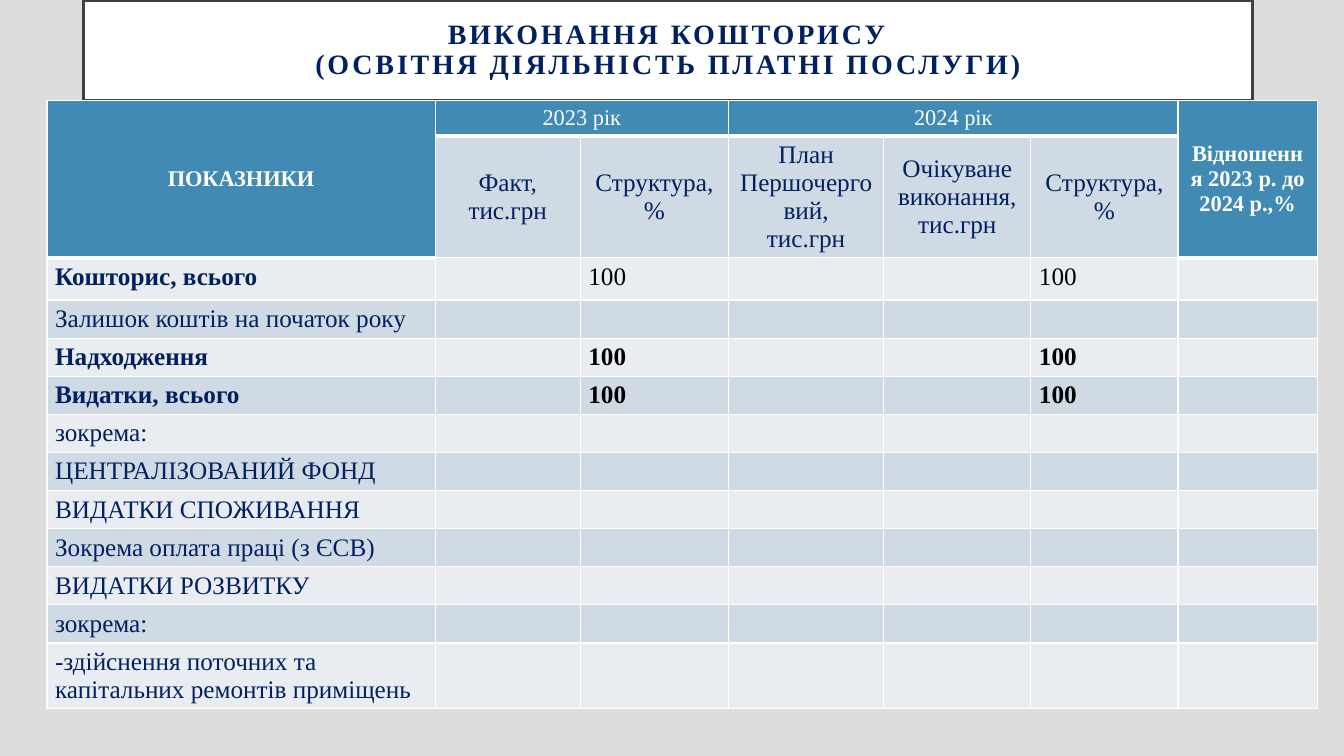
"""Build the slide with the budget execution table for paid educational services."""
import dataclasses

import lxml.etree
import pptx
import pptx.dml.color
import pptx.enum.text
import pptx.oxml.ns
import pptx.util

COLORS = {
    "backdrop": "DDDDDD",
    "white": "FFFFFF",
    "frame": "404040",
    "navy": "002060",
    "black": "000000",
    "header": "418AB3",
    "dark_band": "CFDAE5",
    "light_band": "E9EDF2",
}
FONT = "Times New Roman"
SLIDE_WIDTH = pptx.util.Inches(13.33)
SLIDE_HEIGHT = pptx.util.Inches(7.5)
COLUMN_SHARES = [28.88, 10.8, 11.03, 11.55, 10.95, 10.95, 10.35]
ROW_SHARES = [4.67, 16, 5.6] + [5.04] * 9 + [8.67]
STRUCTURE_COLUMNS = (2, 5)
TALL_COLUMNS = (0, 6)


@dataclasses.dataclass(frozen=True)
class Heading:
    row: int
    column: int
    text: str
    rows: int = 1
    columns: int = 1
    bold: bool = False
    middle: bool = True


@dataclasses.dataclass(frozen=True)
class Indicator:
    name: str
    share: str = ""
    bold: bool = False
    share_bold: bool = False


HEADINGS = [
    Heading(0, 0, "ПОКАЗНИКИ", rows=2, bold=True),
    Heading(0, 1, "2023 рік", columns=2, middle=False),
    Heading(0, 3, "2024 рік", columns=3, middle=False),
    Heading(0, 6, "Відношення 2023 р. до 2024 р.,%", rows=2, bold=True),
    Heading(1, 1, "Факт,\nтис.грн"),
    Heading(1, 2, "Структура,\n%"),
    Heading(1, 3, "План Першочерговий,\nтис.грн"),
    Heading(1, 4, "Очікуване\nвиконання, тис.грн"),
    Heading(1, 5, "Структура,\n%"),
]
INDICATORS = [
    Indicator("Кошторис, всього", "100", bold=True),
    Indicator("Залишок коштів на початок року"),
    Indicator("Надходження", "100", bold=True, share_bold=True),
    Indicator("Видатки, всього", "100", bold=True, share_bold=True),
    Indicator("зокрема:"),
    Indicator("ЦЕНТРАЛІЗОВАНИЙ ФОНД"),
    Indicator("ВИДАТКИ СПОЖИВАННЯ"),
    Indicator("Зокрема оплата праці (з ЄСВ)"),
    Indicator("ВИДАТКИ РОЗВИТКУ"),
    Indicator("зокрема:"),
    Indicator("-здійснення поточних та капітальних ремонтів приміщень"),
]


def color(name: str) -> pptx.dml.color.RGBColor:
    return pptx.dml.color.RGBColor.from_string(COLORS[name])


def across(percent: float) -> int:
    return round(SLIDE_WIDTH * percent / 100)


def down(percent: float) -> int:
    return round(SLIDE_HEIGHT * percent / 100)


def paint(fill, name: str) -> None:
    fill.solid()
    fill.fore_color.rgb = color(name)


def write(frame, text: str, size: float, ink: str, bold: bool, centered: bool) -> None:
    frame.text = text
    for paragraph in frame.paragraphs:
        paragraph.font.name = FONT
        paragraph.font.size = pptx.util.Pt(size)
        paragraph.font.bold = bold
        paragraph.font.color.rgb = color(ink)
        if centered:
            paragraph.alignment = pptx.enum.text.PP_ALIGN.CENTER


def add_borders(cell, bottom_width: float) -> None:
    properties = cell._tc.get_or_add_tcPr()
    for side, width in (("lnL", 1), ("lnR", 1), ("lnT", 1), ("lnB", bottom_width)):
        line = lxml.etree.SubElement(
            properties, pptx.oxml.ns.qn(f"a:{side}"), w=str(pptx.util.Pt(width)))
        solid = lxml.etree.SubElement(line, pptx.oxml.ns.qn("a:solidFill"))
        lxml.etree.SubElement(solid, pptx.oxml.ns.qn("a:srgbClr"), val=COLORS["white"])


def add_title(slide) -> None:
    title = slide.shapes.title
    title.left, title.top = across(6.23), 0
    title.width, title.height = across(86.95), down(13.33)
    paint(title.fill, "white")
    title.line.color.rgb = color("frame")
    title.line.width = pptx.util.Pt(2.5)
    frame = title.text_frame
    frame.auto_size = pptx.enum.text.MSO_AUTO_SIZE.NONE
    frame.word_wrap = True
    frame.vertical_anchor = pptx.enum.text.MSO_ANCHOR.MIDDLE
    frame.margin_left = frame.margin_right = across(1.5)
    frame.margin_top = frame.margin_bottom = down(2.67)
    write(frame, "ВИКОНАННЯ КОШТОРИСУ\v(ОСВІТНЯ ДІЯЛЬНІСТЬ ПЛАТНІ ПОСЛУГИ)",
          20, "navy", True, True)
    paragraph = frame.paragraphs[0]
    paragraph.line_spacing = 0.9
    for run in paragraph.runs:
        run._r.get_or_add_rPr().set("spc", "200")


def style_grid(table) -> None:
    for row in range(len(ROW_SHARES)):
        for column in range(len(COLUMN_SHARES)):
            cell = table.cell(row, column)
            is_header = row == 0 or (row == 1 and column in TALL_COLUMNS)
            add_borders(cell, 3 if is_header else 1)
            band = "dark_band" if row % 2 else "light_band"
            paint(cell.fill, "header" if is_header else band)
            cell.margin_left = cell.margin_right = across(0.6)
            cell.margin_top = cell.margin_bottom = down(0.67)
            write(cell.text_frame, "", 16 if is_header else 18, "navy", False, False)


def fill_headings(table) -> None:
    for heading in HEADINGS:
        cell = table.cell(heading.row, heading.column)
        if heading.rows * heading.columns > 1:
            cell.merge(table.cell(heading.row + heading.rows - 1,
                                  heading.column + heading.columns - 1))
        if heading.middle:
            cell.vertical_anchor = pptx.enum.text.MSO_ANCHOR.MIDDLE
        size, ink = (18, "navy") if heading.row else (16, "white")
        write(cell.text_frame, heading.text, size, ink, heading.bold, True)


def fill_indicators(table) -> None:
    for row, indicator in enumerate(INDICATORS, start=2):
        write(table.cell(row, 0).text_frame, indicator.name,
              18, "navy", indicator.bold, False)
        if indicator.share:
            for column in STRUCTURE_COLUMNS:
                write(table.cell(row, column).text_frame, indicator.share,
                      18, "black", indicator.share_bold, False)


def add_budget_table(slide) -> None:
    table = slide.shapes.add_table(
        len(ROW_SHARES), len(COLUMN_SHARES), across(3.5), down(13.33),
        across(sum(COLUMN_SHARES)), down(sum(ROW_SHARES))).table
    table.first_row = table.horz_banding = False
    for column, share in zip(table.columns, COLUMN_SHARES):
        column.width = across(share)
    for row, share in zip(table.rows, ROW_SHARES):
        row.height = down(share)
    style_grid(table)
    fill_headings(table)
    fill_indicators(table)


def main() -> None:
    deck = pptx.Presentation()
    deck.slide_width, deck.slide_height = SLIDE_WIDTH, SLIDE_HEIGHT
    slide = deck.slides.add_slide(deck.slide_layouts.get_by_name("Title Only"))
    paint(slide.background.fill, "backdrop")
    add_title(slide)
    add_budget_table(slide)
    deck.save("out.pptx")


if __name__ == "__main__":
    main()
